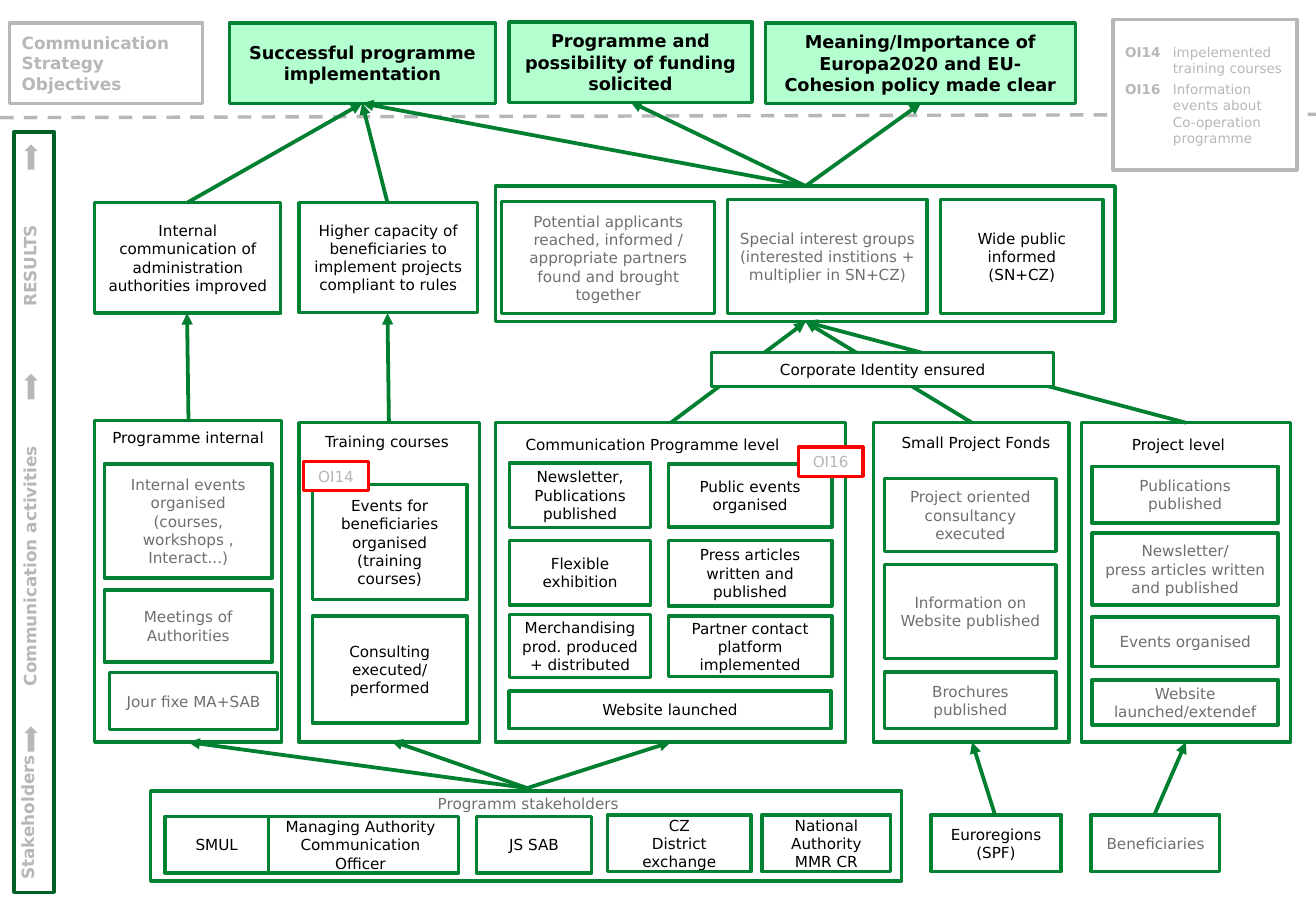
import pptx
import pptx.dml.color
import pptx.enum.dml
import pptx.enum.shapes
import pptx.enum.text
import pptx.oxml
import pptx.util
from pptx.oxml import ns

Cm = pptx.util.Cm
Pt = pptx.util.Pt
RGBColor = pptx.dml.color.RGBColor
Shape = pptx.enum.shapes.MSO_SHAPE
Align = pptx.enum.text.PP_ALIGN

GREEN = RGBColor(0x00, 0x82, 0x32)
ARROW_GREEN = RGBColor(0x00, 0x7F, 0x31)
DARK_GREEN = RGBColor(0x00, 0x60, 0x25)
MINT = RGBColor(0xB3, 0xFF, 0xD0)
WHITE = RGBColor(0xFF, 0xFF, 0xFF)
BLACK = RGBColor(0x00, 0x00, 0x00)
GREY = RGBColor(0x6F, 0x6F, 0x6F)
LIGHT_GREY = RGBColor(0xB7, 0xB7, 0xB7)
RED = RGBColor(0xFF, 0x00, 0x00)

GOALS = [
    (4.8, 0.48, 5.56, "Successful programme implementation"),
    (10.64, 0.46, 5.08, "Programme and possibility of funding solicited"),
    (16, 0.48, 6.48, "Meaning/Importance of Europa2020 and EU-Cohesion policy made clear"),
]
FRAMES = [
    (3.15, 16.54, 15.7, 1.88),
    (10.36, 3.89, 12.95, 2.84),
    (1.98, 8.79, 3.91, 6.73),
    (6.25, 8.84, 3.78, 6.68),
    (10.36, 8.84, 7.32, 6.68),
    (18.26, 8.84, 4.09, 6.68),
    (22.61, 8.84, 4.37, 6.68),
]
RESULTS = [
    (1.98, 4.24, 3.89, 2.31, BLACK, "Internal communication of administration authorities improved"),
    (6.25, 4.24, 3.73, 2.29, BLACK,
     "Higher capacity of beneficiaries to implement projects compliant to rules"),
    (10.49, 4.22, 4.45, 2.34, GREY,
     "Potential applicants reached, informed / appropriate partners found and brought together"),
    (15.21, 4.17, 4.17, 2.39, GREY,
     "Special interest groups (interested institions + multiplier in SN+CZ)"),
    (19.66, 4.17, 3.4, 2.39, BLACK, "Wide public informed (SN+CZ)"),
    (14.88, 7.37, 7.14, 0.71, BLACK, "Corporate Identity ensured"),
]
ACTIVITY_COLUMNS = [
    (2.18, 3.51, GREY, [
        (9.7, 2.39, "Internal events organised (courses, workshops , Interact...)"),
        (12.34, 1.5, "Meetings of Authorities")]),
    (2.29, 3.51, GREY, [(14.07, 1.19, "Jour fixe MA+SAB")]),
    (6.53, 3.23, BLACK, [
        (10.13, 2.41, "Events for beneficiaries organised (training courses)"),
        (12.88, 2.24, "Consulting executed/\nperformed")]),
    (10.65, 2.95, BLACK, [
        (9.68, 1.35, "Newsletter, Publications published"),
        (11.3, 1.35, "Flexible exhibition"),
        (12.85, 1.32, "Merchandising prod. produced + distributed")]),
    (13.97, 3.42, BLACK, [
        (9.7, 1.32, "Public events organised"),
        (11.3, 1.37, "Press articles written and published"),
        (12.88, 1.27, "Partner contact platform implemented")]),
    (10.64, 6.73, BLACK, [(14.45, 0.79, "Website launched")]),
    (18.49, 3.59, GREY, [
        (10.01, 1.52, "Project oriented consultancy executed"),
        (11.81, 1.96, "Information on Website published"),
        (14.05, 1.19, "Brochures\npublished")]),
    (22.83, 3.89, GREY, [
        (9.75, 1.19, "Publications\npublished"),
        (11.15, 1.5, "Newsletter/\npress articles written and published"),
        (12.9, 1.04, "Events organised"),
        (14.22, 0.94, "Website launched/extendef")]),
]
STAKEHOLDERS = [
    (5.49, 17.07, 4.09, BLACK, "Managing Authority Communication Officer"),
    (3.45, 17.07, 2.16, BLACK, "SMUL"),
    (9.96, 17.07, 2.41, BLACK, "JS SAB"),
    (12.7, 17.04, 3, BLACK, "CZ\nDistrict exchange"),
    (15.93, 17.04, 2.69, BLACK, "National Authority MMR CR"),
    (19.46, 17.04, 2.72, BLACK, "Euroregions (SPF)"),
    (22.81, 17.04, 2.69, GREY, "Beneficiaries"),
]
LABELS = [
    (1.96, 8.84, 3.94, BLACK, "Programme internal"),
    (6.12, 8.92, 3.94, BLACK, "Training courses"),
    (10.59, 8.97, 6.1, BLACK, "Communication Programme level"),
    (18.47, 8.94, 3.86, BLACK, "Small Project Fonds"),
    (22.45, 8.97, 4.37, BLACK, "Project level"),
    (3.05, 16.48, 15.98, GREY, "Programm stakeholders"),
]
SIDE_LABELS = [
    (0.61, 17.09, 3.2, "Stakeholders"),
    (0.66, 11.84, 7.01, "Communication activities"),
    (0.66, 5.56, 4.72, "RESULTS"),
]
LEGEND = [
    ("OI14", "impelemented training courses"),
    ("OI16", "Information events about Co-operation programme"),
]
TARGET_TOP, TARGET_BOTTOM = (16.84, 3.89), (16.84, 6.73)
FIRST_GOAL = (7.57, 2.16)
STAKEHOLDERS_TOP = (11.02, 16.48)
ARROWS = [
    ((3.91, 4.24), FIRST_GOAL),
    ((8.1, 4.24), FIRST_GOAL),
    (TARGET_TOP, FIRST_GOAL),
    (TARGET_TOP, (13.18, 2.13)),
    (TARGET_TOP, (19.25, 2.16)),
    (STAKEHOLDERS_TOP, (3.94, 15.52)),
    (STAKEHOLDERS_TOP, (8.18, 15.49)),
    (STAKEHOLDERS_TOP, (14.02, 15.52)),
    ((20.8, 17.04), (20.32, 15.52)),
    ((24.13, 17.04), (24.79, 15.52)),
    ((3.94, 8.79), (3.91, 6.55)),
    ((8.13, 8.84), (8.1, 6.55)),
]


class Diagram:
    font_name = "DejaVu Sans"

    def __init__(self, slide):
        self.slide = slide

    def format_run(self, run, size, color, bold=False):
        run.font.name = self.font_name
        run.font.size = Pt(size)
        run.font.bold = bold
        run.font.color.rgb = color

    def set_text(self, shape, text, size, color, bold=False, align=Align.CENTER):
        text_frame = shape.text_frame
        text_frame.word_wrap = True
        text_frame.text = text
        for paragraph in text_frame.paragraphs:
            paragraph.alignment = align
            for run in paragraph.runs:
                self.format_run(run, size, color, bold)

    def title(self, text, left, top, width, height):
        title = self.slide.shapes.title
        title.left, title.top, title.width, title.height = map(Cm, (left, top, width, height))
        title.line.color.rgb = LIGHT_GREY
        title.line.width = Pt(2)
        title.text_frame.auto_size = pptx.enum.text.MSO_AUTO_SIZE.NONE
        title.text_frame.vertical_anchor = pptx.enum.text.MSO_ANCHOR.MIDDLE
        self.set_text(title, text, 10, LIGHT_GREY, True, Align.LEFT)

    def box(self, left, top, width, height, line=GREEN, fill=None, kind=Shape.FLOWCHART_PROCESS):
        shape = self.slide.shapes.add_shape(kind, *map(Cm, (left, top, width, height)))
        shape.shadow.inherit = False
        if fill is None:
            shape.fill.background()
        else:
            shape.fill.solid()
            shape.fill.fore_color.rgb = fill
        if line is None:
            shape.line.fill.background()
        else:
            shape.line.color.rgb = line
            shape.line.width = Pt(2)
        shape.text_frame.vertical_anchor = pptx.enum.text.MSO_ANCHOR.MIDDLE
        return shape

    def text_box(self, left, top, width, height, text, color):
        shape = self.slide.shapes.add_textbox(*map(Cm, (left, top, width, height)))
        self.set_text(shape, text, 9, color)

    def side_label(self, center_x, center_y, width, text):
        height = 0.61
        shape = self.slide.shapes.add_textbox(
            Cm(center_x - width / 2), Cm(center_y - height / 2), Cm(width), Cm(height))
        shape.rotation = 270
        self.set_text(shape, text, 10, LIGHT_GREY, True)
        shape.text_frame.paragraphs[0].line_spacing = Pt(10)

    def legend(self, shape, entries):
        text_frame = shape.text_frame
        text_frame.word_wrap = True
        indent = Cm(1)
        for index, (code, meaning) in enumerate(entries):
            paragraph = text_frame.add_paragraph() if index else text_frame.paragraphs[0]
            paragraph.alignment = Align.LEFT
            paragraph.space_after = Pt(3)
            properties = paragraph._p.get_or_add_pPr()
            properties.set("marL", str(indent))
            properties.set("indent", str(-indent))
            properties.append(pptx.oxml.parse_xml(
                f'<a:tabLst {ns.nsdecls("a")}><a:tab pos="{indent}" algn="l"/></a:tabLst>'))
            for text, bold in ((code + "\t", True), (meaning, False)):
                run = paragraph.add_run()
                run.text = text
                self.format_run(run, 8, LIGHT_GREY, bold)

    def line(self, start, end, color=ARROW_GREEN, width=2.25, arrow=True):
        connector = self.slide.shapes.add_connector(
            pptx.enum.shapes.MSO_CONNECTOR.STRAIGHT, *map(Cm, start + end))
        connector.line.color.rgb = color
        connector.line.width = Pt(width)
        if arrow:
            connector.line._get_or_add_ln().append(
                pptx.oxml.parse_xml(f'<a:tailEnd {ns.nsdecls("a")} type="triangle"/>'))
        else:
            connector.line.dash_style = pptx.enum.dml.MSO_LINE.DASH
        connector._element.spPr.append(
            pptx.oxml.parse_xml(f'<a:effectLst {ns.nsdecls("a")}/>'))


def main():
    presentation = pptx.Presentation()
    presentation.slide_width, presentation.slide_height = Cm(27.51), Cm(19.05)
    diagram = Diagram(presentation.slides.add_slide(presentation.slide_layouts[5]))

    diagram.title("Communication\nStrategy Objectives", 0.2, 0.48, 4.04, 1.68)
    for x in (14.02, 20.32, 24.79):
        diagram.line((x, 8.84), TARGET_BOTTOM)
    diagram.line((0, 2.46), (27.51, 2.39), LIGHT_GREY, 2, arrow=False)
    for frame in FRAMES:
        diagram.box(*frame)

    diagram.box(0.29, 2.76, 0.84, 15.9, DARK_GREEN, kind=Shape.RECTANGLE)
    for label in SIDE_LABELS:
        diagram.side_label(*label)
    for top in (3.02, 7.82, 15.19):
        diagram.box(0.51, top, 0.28, 0.53, None, LIGHT_GREY, Shape.UP_ARROW)

    for left, top, width, text in GOALS:
        diagram.set_text(diagram.box(left, top, width, 1.68, fill=MINT), text, 10.5, BLACK, True)
    boxes = RESULTS + [
        (left, top, width, height, color, text)
        for left, width, color, column in ACTIVITY_COLUMNS for top, height, text in column
    ] + [(left, top, width, 1.19, color, text) for left, top, width, color, text in STAKEHOLDERS]
    for left, top, width, height, color, text in boxes:
        diagram.set_text(diagram.box(left, top, width, height, fill=WHITE), text, 9, color)
    for left, top, code in ((6.35, 9.65, "OI14"), (16.69, 9.35, "OI16")):
        diagram.set_text(diagram.box(left, top, 1.35, 0.61, RED, WHITE), code, 9, LIGHT_GREY)

    diagram.legend(diagram.box(23.27, 0.41, 3.84, 3.15, LIGHT_GREY, WHITE), LEGEND)
    for left, top, width, color, text in LABELS:
        diagram.text_box(left, top, width, 0.64, text, color)
    for start, end in ARROWS:
        diagram.line(start, end)
    presentation.save("out.pptx")


if __name__ == "__main__":
    main()
